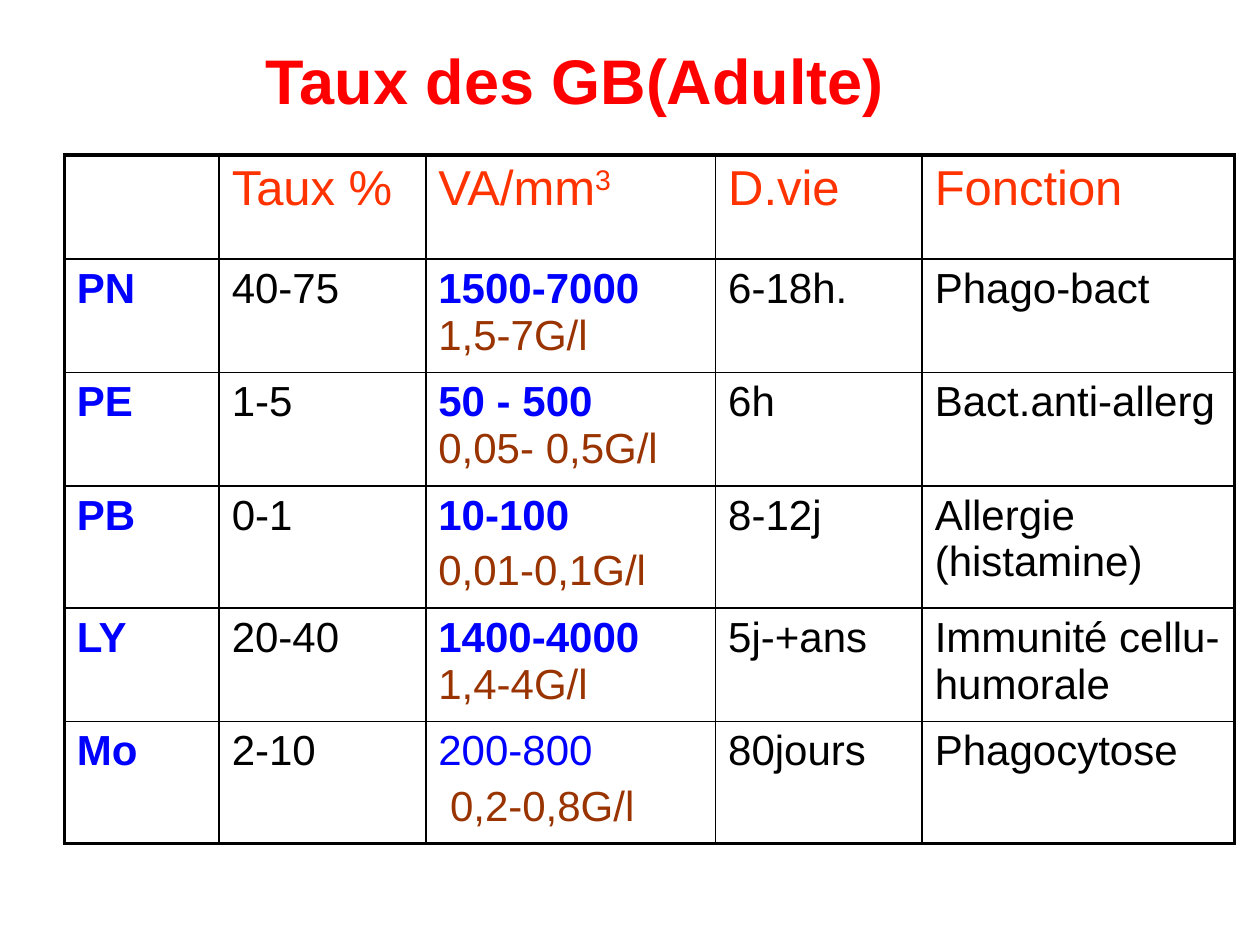
from lxml import etree
from pptx import Presentation
from pptx import util as u
from pptx.dml.color import RGBColor
from pptx.enum import text
from pptx.oxml import ns

RED = RGBColor(0xFF, 0x00, 0x00)
ORANGE = RGBColor(0xFF, 0x33, 0x00)
BLUE = RGBColor(0x00, 0x00, 0xFF)
BROWN = RGBColor(0x99, 0x33, 0x00)
BLACK = RGBColor(0x00, 0x00, 0x00)

TITLE = {"size": u.Pt(36), "bold": True, "color": RED}
HEADER = {"size": u.Pt(28), "bold": False, "color": ORANGE}
BODY = {"size": u.Pt(24), "bold": False, "color": BLACK}
KEY = {**BODY, "bold": True, "color": BLUE}
COUNT = {**BODY, "color": BLUE}
UNIT = {**BODY, "color": BROWN}
BREAK = ("\n", BODY)

COLUMNS = [0.123, 0.164, 0.23, 0.164, 0.248]  # shares of the slide's width
ROW = 0.11  # share of the slide's height

# Cell type, rate, paragraphs of absolute values, lifespan, function
CELLS = [
    ("PN", "40-75", [[("1500-7000 ", KEY), ("1,5-7G/l", UNIT)]],
     "6-18h.", "Phago-bact"),
    ("PE", "1-5", [[("50 - 500", KEY), BREAK, ("0,05- 0,5G/l", UNIT)]],
     "6h", "Bact.anti-allerg"),
    ("PB", "0-1", [[("10-100", KEY)], [("0,01-0,1G/l", UNIT)]],
     "8-12j", "Allergie (histamine)"),
    ("LY", "20-40", [[("1400-4000 ", KEY), ("1,4-4G/l", UNIT)]],
     "5j-+ans", "Immunité cellu-humorale"),
    ("Mo", "2-10", [[("200-800", COUNT)], [(" ", BODY), ("0,2-0,8G/l", UNIT)]],
     "80jours", "Phagocytose"),
]


def single(words, style):
    """One paragraph holding one span."""
    return [[(words, style)]]


class SlideBuilder:
    font = "Arial"
    thin, thick = u.Pt(1), u.Pt(2.25)

    def __init__(self, deck):
        self.width, self.height = deck.slide_width, deck.slide_height
        self.slide = deck.slides.add_slide(deck.slide_layouts[6])

    def place(self, left, top, width, height):
        """Turn shares of the slide into lengths."""
        return (int(left * self.width), int(top * self.height),
                int(width * self.width), int(height * self.height))

    def fill_text(self, frame, paragraphs, align=text.PP_ALIGN.LEFT):
        for index, spans in enumerate(paragraphs):
            para = frame.add_paragraph() if index else frame.paragraphs[0]
            para.alignment = align
            if index:
                para.space_before = u.Pt(5)
            for words, style in spans:
                if words == "\n":
                    para.add_line_break()
                else:
                    self.add_span(para, words, style)

    def add_span(self, para, words, style):
        span = para.add_run()
        span.text = words
        span.font.name = self.font
        for name, value in style.items():
            if name == "color":
                span.font.color.rgb = value
            elif name == "baseline":
                span.font._element.set("baseline", str(value))
            else:
                setattr(span.font, name, value)

    def title(self, words, *area):
        box = self.slide.shapes.add_textbox(*self.place(*area))
        box.text_frame.word_wrap = True
        box.text_frame.vertical_anchor = text.MSO_ANCHOR.MIDDLE
        self.fill_text(box.text_frame, single(words, TITLE),
                       text.PP_ALIGN.CENTER)

    def border(self, cell, side, width):
        props = cell._tc.get_or_add_tcPr()
        line = etree.SubElement(props, ns.qn(f"a:ln{side}"), w=str(int(width)))
        fill = etree.SubElement(line, ns.qn("a:solidFill"))
        etree.SubElement(fill, ns.qn("a:srgbClr"), val=str(BLACK))

    def table(self, rows, left, top):
        last_row, last_column = len(rows) - 1, len(COLUMNS) - 1
        area = self.place(left, top, sum(COLUMNS), ROW * len(rows))
        table = self.slide.shapes.add_table(
            len(rows), len(COLUMNS), *area).table
        table.first_row = table.horz_banding = False
        for column, share in zip(table.columns, COLUMNS):
            column.width = int(share * self.width)
        for r, row in enumerate(rows):
            table.rows[r].height = int(ROW * self.height)
            for c, paragraphs in enumerate(row):
                cell = table.cell(r, c)
                outer = {"L": c == 0, "R": c == last_column,
                         "T": r == 0, "B": r == last_row}
                for side, is_edge in outer.items():
                    self.border(cell, side, self.thick if is_edge else self.thin)
                cell.fill.background()
                self.fill_text(cell.text_frame, paragraphs)


def main():
    deck = Presentation()
    deck.slide_width, deck.slide_height = u.Inches(10), u.Inches(7.5)
    builder = SlideBuilder(deck)
    builder.title("Taux des GB(Adulte)", 0.185, 0, 0.543, 0.167)
    superscript = {**HEADER, "baseline": 30000}
    header = [[], single("Taux %", HEADER),
              [[("VA/mm", HEADER), ("3", superscript)]],
              single("D.vie", HEADER), single("Fonction", HEADER)]
    body = [[single(kind, KEY), single(rate, BODY), values,
             single(life, BODY), single(role, BODY)]
            for kind, rate, values, life, role in CELLS]
    builder.table([header] + body, 0.051, 0.164)
    deck.save("out.pptx")


if __name__ == "__main__":
    main()
